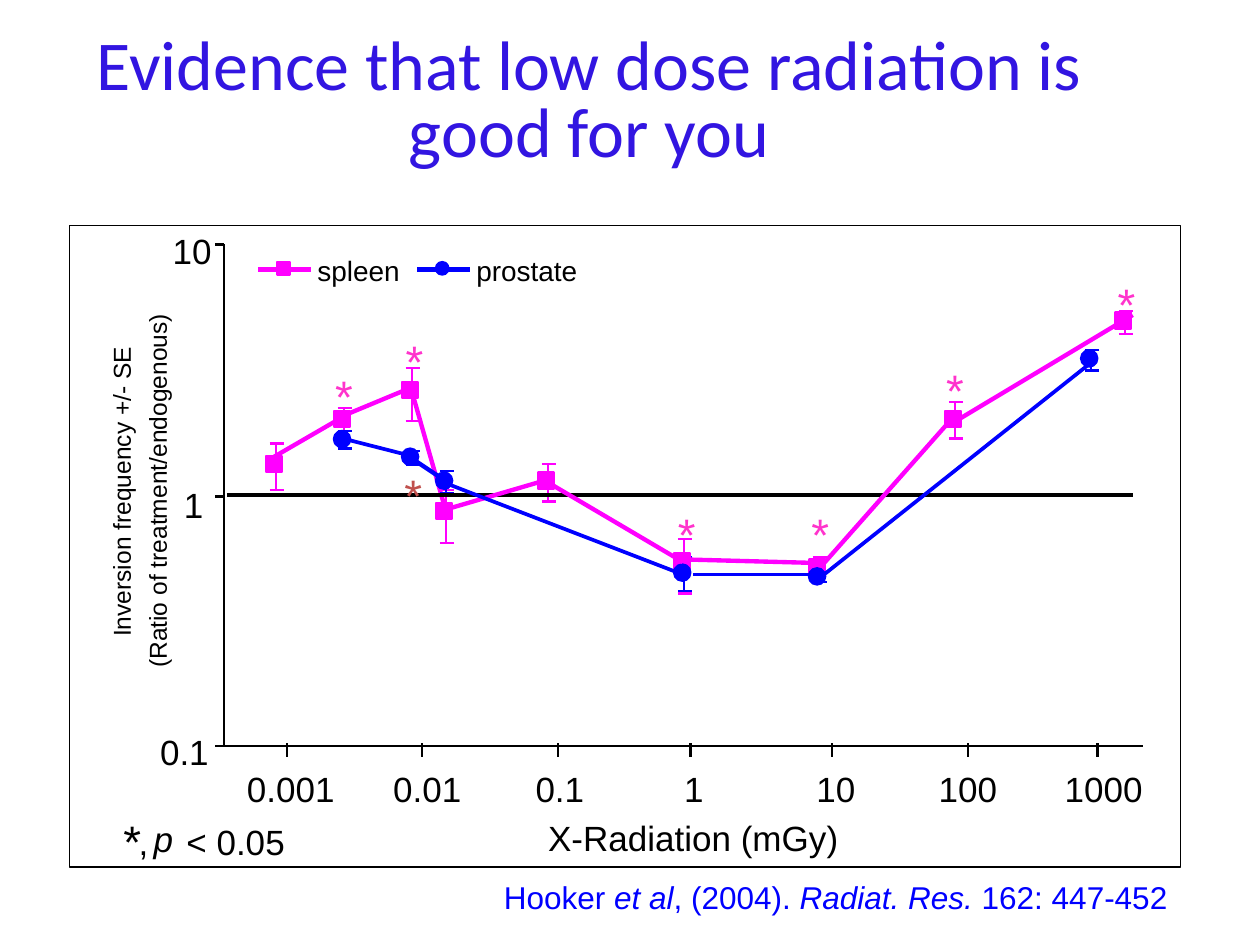
from itertools import chain

from lxml import etree
from pptx import Presentation
from pptx.dml.color import RGBColor as Rgb
from pptx.enum.shapes import MSO_CONNECTOR as Connector, MSO_SHAPE as Shape
from pptx.enum.text import MSO_ANCHOR as Anchor, MSO_AUTO_SIZE as AutoSize, PP_ALIGN as Align
from pptx.oxml.ns import qn
from pptx.util import Pt

PX = 9144  # 100 px to the inch
COLORS = {
    "title": "3215E1",
    "black": "000000",
    "white": "FFFFFF",
    "spleen": "FF00FF",
    "prostate": "0000FF",
    "star": "FF33CC",
    "red star": "C0504D",
}

deck = Presentation()
deck.slide_width, deck.slide_height = 1000 * PX, 750 * PX
page = deck.slides.add_slide(deck.slide_layouts[6])


def draw_line(x1, y1, x2, y2, color="black", width=1.25):
    line = page.shapes.add_connector(Connector.STRAIGHT, x1 * PX, y1 * PX, x2 * PX, y2 * PX)
    line.line.color.rgb = Rgb.from_string(COLORS[color])
    line.line.width = Pt(width)
    etree.SubElement(line._element.spPr, qn("a:effectLst"))


def write(spans, left, top, width, height, size=20, color="black", font="Arial", margins=(0, 0)):
    """Add a one-paragraph box from (text, italic) spans; boxes with margins wrap."""
    box = page.shapes.add_textbox(left * PX, top * PX, width * PX, height * PX)
    frame = box.text_frame
    frame.word_wrap = any(margins)
    frame.auto_size = AutoSize.SHAPE_TO_FIT_TEXT
    frame.margin_left = frame.margin_right = margins[0] * PX
    frame.margin_top = frame.margin_bottom = margins[1] * PX
    para = frame.paragraphs[0]
    para.font.size, para.font.name = Pt(size), font
    para.font.color.rgb = Rgb.from_string(COLORS[color])
    for text, italic in spans:
        span = para.add_run()
        span.text = text
        if italic:
            span.font.italic = True
    return box


# Title
title = write([("Evidence that low dose radiation is good for you", False)],
              59, 16, 817, 133, 40, "title", "Calibri", (10, 5))
title.text_frame.auto_size = AutoSize.NONE
title.text_frame.vertical_anchor = Anchor.MIDDLE
title.text_frame.paragraphs[0].alignment = Align.CENTER
title.text_frame.paragraphs[0].line_spacing = 0.8

# Plot frame
plot = page.shapes.add_shape(Shape.RECTANGLE, 55 * PX, 179 * PX, 882 * PX, 509 * PX)
plot.shadow.inherit = False
plot.fill.solid()
plot.fill.fore_color.rgb = Rgb.from_string(COLORS["white"])
plot.line.color.rgb = Rgb.from_string(COLORS["black"])
plot.line.width = 0

# Axes: (label, label left, label top, label width, tick y) and (label, left, width, tick x)
AXIS_X, AXIS_Y = 178, 592
draw_line(AXIS_X, 194, AXIS_X, AXIS_Y)
draw_line(AXIS_X, AXIS_Y, 907, AXIS_Y)
for label, left, top, width, y in [
    ("10", 137, 182, 31, 194), ("1", 146, 384, 16, 394), ("0.1", 127, 580, 39, AXIS_Y),
]:
    draw_line(AXIS_X - 7, y, AXIS_X, y)
    write([(label, False)], left, top, width, 34)
for label, left, width, x in [
    ("0.001", 196, 70, 228), ("0.01", 312, 55, 335), ("0.1", 425, 39, 443), ("1", 543, 16, 548),
    ("10", 648, 31, 660), ("100", 745, 47, 768), ("1000", 845, 62, 871),
]:
    draw_line(x, AXIS_Y - 2, x, AXIS_Y + 9)
    write([(label, False)], left, 609, width, 34)
write([("X-Radiation (mGy)", False)], 435, 648, 232, 34)
for label, left, top, width in [
    ("Inversion frequency +/- SE", -22, 375, 237),
    ("(Ratio of treatment/endogenous)", -16, 377, 282),
]:
    write([(label, False)], left, top, width, 24, 14).rotation = 270

# Points: (x, error top, error bottom, marker top)
POINTS = {
    "spleen": [
        (219, 352, 389, 362), (273, 324, 342, 326), (327, 292, 334, 303),
        (354, 389, 431, 399), (435, 368, 398, 375), (543, 428, 471, 439),
        (650, 442, 462, 444), (758, 319, 348, 326), (893, 247, 265, 248),
    ],
    "prostate": [
        (273, 342, 356, 342), (327, 358, 369, 356), (354, 374, 391, 375),
        (543, 442, 469, 448), (650, 455, 462, 451), (866, 278, 294, 278),
    ],
}
MARKERS = {"spleen": Shape.RECTANGLE, "prostate": Shape.OVAL}
LEGEND = {"spleen": (205, 66), "prostate": (331, 81)}  # left, label width

draw_line(327, 311, 354, 406, "spleen", 2.5)
draw_line(327, 364, 354, 382, "prostate", 2.5)
for name, points in POINTS.items():
    for x, high, low, _ in points:
        draw_line(x, high, x, low, name)
        for y in (high, low):
            draw_line(x - 5, y, x + 6, y, name)

for name, (left, width) in LEGEND.items():
    draw_line(left, 214, left + 42, 214, name, 2.5)
    write([(name, False)], left + 47, 201, width, 27, 16)
    spots = ((x - 8, top, 13) for x, _, _, top in POINTS[name])
    for x, y, size in chain(spots, [(left + 15, 208, 10)]):
        marker = page.shapes.add_shape(MARKERS[name], x * PX, y * PX, size * PX, size * PX)
        marker.shadow.inherit = False
        marker.fill.solid()
        marker.fill.fore_color.rgb = Rgb.from_string(COLORS[name])
        marker.line.color.rgb = Rgb.from_string(COLORS[name])
        marker.line.width = Pt(1.25)

# Reference line at 1 and the series lines
draw_line(180, 393, 899, 393, width=2.5)
for ends in [
    (215, 364, 272, 331), (270, 331, 323, 309), (355, 404, 437, 380), (430, 380, 542, 446),
    (542, 444, 654, 447), (654, 447, 754, 334), (754, 337, 899, 250),
]:
    draw_line(*ends, "spleen", 2.5)
for ends in [
    (272, 348, 323, 361), (355, 384, 542, 456), (550, 456, 642, 456), (654, 456, 867, 287),
]:
    draw_line(*ends, "prostate", 2.13)

# Significance stars and their key
for left, top, color in [
    (266, 292, "star"), (322, 264, "star"), (321, 371, "red star"), (538, 402, "star"),
    (644, 402, "star"), (751, 287, "star"), (887, 219, "star"), (98, 645, "black"),
]:
    write([("*", False)], left, top, 14, 44, 26, color)
write([(",", False)], 110, 651, 15, 34)
write([("p", True)], 122, 649, 16, 34)
write([("< 0.05", False)], 148, 651, 86, 34)

# Citation
write([("Hooker ", False), ("et al", True), (", (2004). ", False),
       ("Radiat. Res.", True), (" 162: 447-452", False)],
      390, 692, 558, 40, 18, "prostate", margins=(10, 5))

deck.save("out.pptx")
